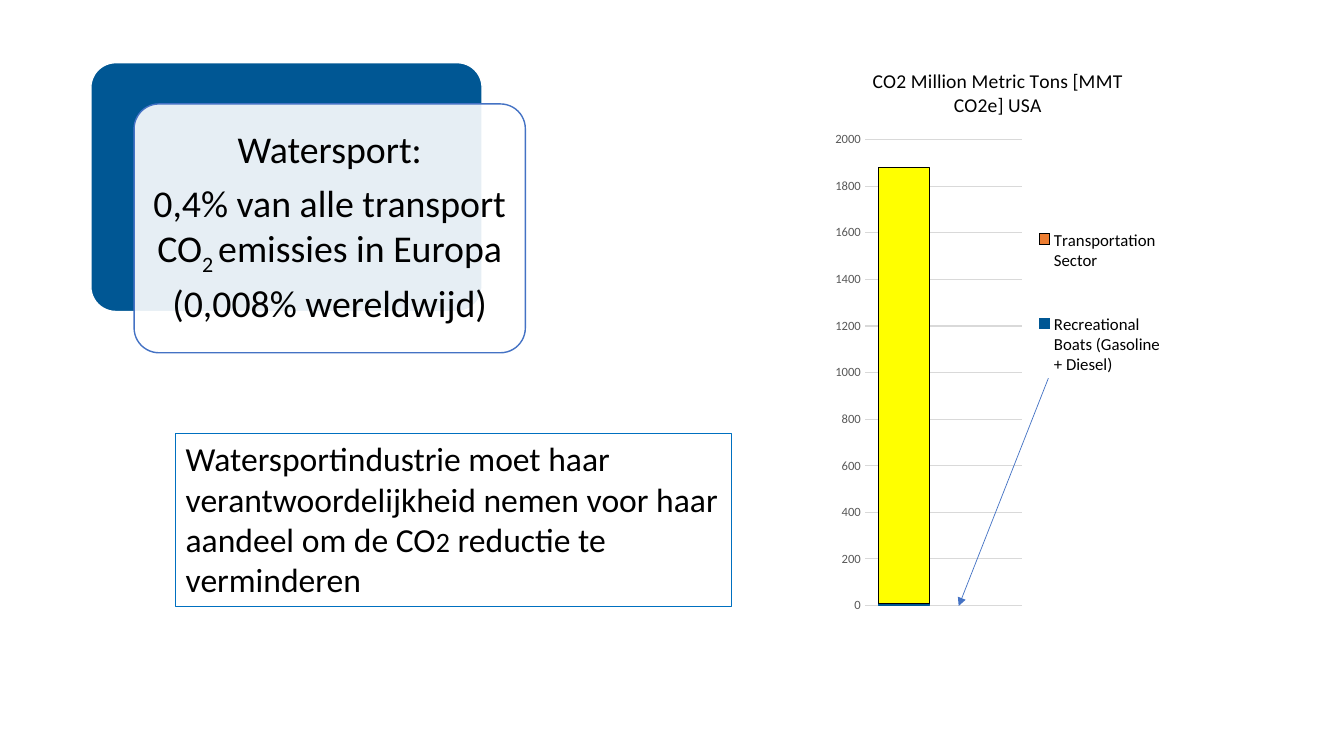
from lxml.etree import SubElement
from pptx import Presentation
from pptx.chart.data import CategoryChartData
from pptx.dml.color import RGBColor
from pptx.enum.chart import XL_CHART_TYPE as ChartType, XL_LEGEND_POSITION as LegendPos, XL_TICK_MARK as Tick
from pptx.enum.shapes import MSO_CONNECTOR as Connector, MSO_SHAPE as Shape
from pptx.enum.text import MSO_ANCHOR as Anchor, PP_ALIGN as Align
from pptx.oxml import parse_xml
from pptx.oxml.ns import nsdecls, qn
from pptx.util import Cm, Pt

FONT = "Calibri"
NAVY, BLUE, BLACK, WHITE = "005794", "4472C4", "000000", "FFFFFF"


def color(value):
    return RGBColor.from_string(value)


def style_font(font, size, value=BLACK):
    font.name, font.size, font.bold = FONT, Pt(size), False
    font.color.rgb = color(value)


def style_line(line, value, width):
    line.color.rgb = color(value)
    line.width = Pt(width)


def add_run(paragraph, text, size, baseline=None):
    run = paragraph.add_run()
    run.text = text
    style_font(run.font, size)
    if baseline:
        run.font._element.set("baseline", str(baseline))


def add_card(slide, left, top, width, height, fill, line, opacity=100):
    card = slide.shapes.add_shape(Shape.ROUNDED_RECTANGLE, Cm(left), Cm(top), Cm(width), Cm(height))
    card.shadow.inherit = False
    card.adjustments[0] = 0.1
    card.fill.solid()
    card.fill.fore_color.rgb = color(fill)
    style_line(card.line, line, 1)
    if opacity < 100:
        fill_color = card._element.spPr.find(qn("a:solidFill"))[0]
        SubElement(fill_color, qn("a:alpha"), val=str(opacity * 1000))


def add_share_cards(slide, left, top, width, height):
    # Two overlapping cards, the front one translucent
    shift_x, shift_y, pad = 1.09, 1.04, 0.18
    add_card(slide, left, top, width, height, NAVY, WHITE)
    left, top = left + shift_x, top + shift_y
    add_card(slide, left, top, width, height, WHITE, BLUE, opacity=90)

    # Emission share
    share = slide.shapes.add_textbox(Cm(left + pad), Cm(top + pad),
                                     Cm(width - 2 * pad), Cm(height - 2 * pad)).text_frame
    share.word_wrap = True
    share.vertical_anchor = Anchor.MIDDLE
    share.margin_left = share.margin_right = share.margin_top = share.margin_bottom = Cm(0.28)
    statements = [
        [("Watersport:", None)],
        [("0,4% van alle transport CO", None), ("2 ", -25000), ("emissies in Europa", None)],
        [("(0,008% wereldwijd)", None)],
    ]
    for i, statement in enumerate(statements):
        paragraph = share.add_paragraph() if i else share.paragraphs[0]
        paragraph.alignment = Align.CENTER
        paragraph.line_spacing = 0.9
        paragraph.space_after = Pt(9.45)
        for text, baseline in statement:
            add_run(paragraph, text, 27, baseline)


def add_call(slide, left, top, width, height):
    # Call to the industry
    call = slide.shapes.add_textbox(Cm(left), Cm(top), Cm(width), Cm(height))
    style_line(call.line, "0070C0", 0.75)
    call.text_frame.word_wrap = True
    paragraph = call.text_frame.paragraphs[0]
    add_run(paragraph, "Watersportindustrie moet haar verantwoordelijkheid nemen "
                       "voor haar aandeel om de CO", 24)
    add_run(paragraph, "2", 20)
    add_run(paragraph, " reductie te verminderen", 24)


def manual_layout(x, y, w, h, inner=False):
    target = '<c:layoutTarget val="inner"/>' if inner else ""
    sizes = "".join(f'<c:{tag} val="{val}"/>' for tag, val in zip("xywh", (x, y, w, h)))
    return parse_xml(f'<c:layout {nsdecls("c")}><c:manualLayout>{target}<c:xMode val="edge"/>'
                     f'<c:yMode val="edge"/>{sizes}</c:manualLayout></c:layout>')


def add_emission_chart(slide, left, top, width, height):
    # The second, empty category keeps the bar in the left half
    data = CategoryChartData()
    data.categories = ["1", ""]
    data.add_series("Recreational Boats (Gasoline + Diesel)", [10, None])
    data.add_series("Transportation Sector", [1870, None])
    chart = slide.shapes.add_chart(ChartType.COLUMN_STACKED, Cm(left), Cm(top),
                                   Cm(width), Cm(height), data).chart
    style_font(chart.font, 10)

    # Title
    title = chart.chart_title
    add_run(title.text_frame.paragraphs[0], "CO2 Million Metric Tons [MMT CO2e] USA", 14)
    title.include_in_layout = False

    # Bars
    plot = chart.plots[0]
    plot.gap_width, plot.overlap, plot.vary_by_categories = 55, 100, False
    for series, fill, line in zip(plot.series, (NAVY, "ED7D31"), (NAVY, BLACK)):
        series.format.fill.solid()
        series.format.fill.fore_color.rgb = color(fill)
        style_line(series.format.line, line, 0.75)
    sector_bar = plot.series[1].points[0].format
    sector_bar.fill.solid()
    sector_bar.fill.fore_color.rgb = color("FFFF00")
    style_line(sector_bar.line, BLACK, 0.75)

    # Axes
    chart.category_axis.visible = False
    tons = chart.value_axis
    tons.minimum_scale = 0
    tons.major_tick_mark = tons.minor_tick_mark = Tick.NONE
    tons.format.line.fill.background()
    style_line(tons.major_gridlines.format.line, "D9D9D9", 0.75)
    style_font(tons.tick_labels.font, 9, "595959")

    # Legend and plot positions
    chart.has_legend = True
    legend = chart.legend
    legend.position = LegendPos.RIGHT
    legend.include_in_layout = False
    style_font(legend.font, 12)
    for old in legend._element.findall(qn("c:layout")):
        legend._element.remove(old)
    legend._element.insert(1, manual_layout(0.61, 0.24, 0.38, 0.4))
    plot_area = chart._chartSpace.chart.plotArea
    for old in plot_area.findall(qn("c:layout")):
        plot_area.remove(old)
    plot_area.insert(0, manual_layout(0.11, 0.16, 0.46, 0.8, inner=True))


def add_boats_arrow(slide, start_x, start_y, end_x, end_y):
    # Arrow from the legend to the thin boats bar
    arrow = slide.shapes.add_connector(Connector.STRAIGHT, Cm(start_x), Cm(start_y), Cm(end_x), Cm(end_y))
    style_line(arrow.line, BLUE, 0.5)
    SubElement(arrow.line._get_or_add_ln(), qn("a:tailEnd"), type="triangle")
    SubElement(arrow._element.spPr, qn("a:effectLst"))


def main():
    deck = Presentation()
    deck.slide_width, deck.slide_height = Cm(33.87), Cm(19.05)
    slide = deck.slides.add_slide(deck.slide_layouts[6])
    add_share_cards(slide, 2.29, 1.58, 9.86, 6.27)
    add_emission_chart(slide, 20.85, 1.17, 8.59, 14.68)
    add_call(slide, 4.43, 10.92, 14, 4.37)
    add_boats_arrow(slide, 26.42, 9.53, 24.16, 15.27)
    deck.save("out.pptx")


if __name__ == "__main__":
    main()
